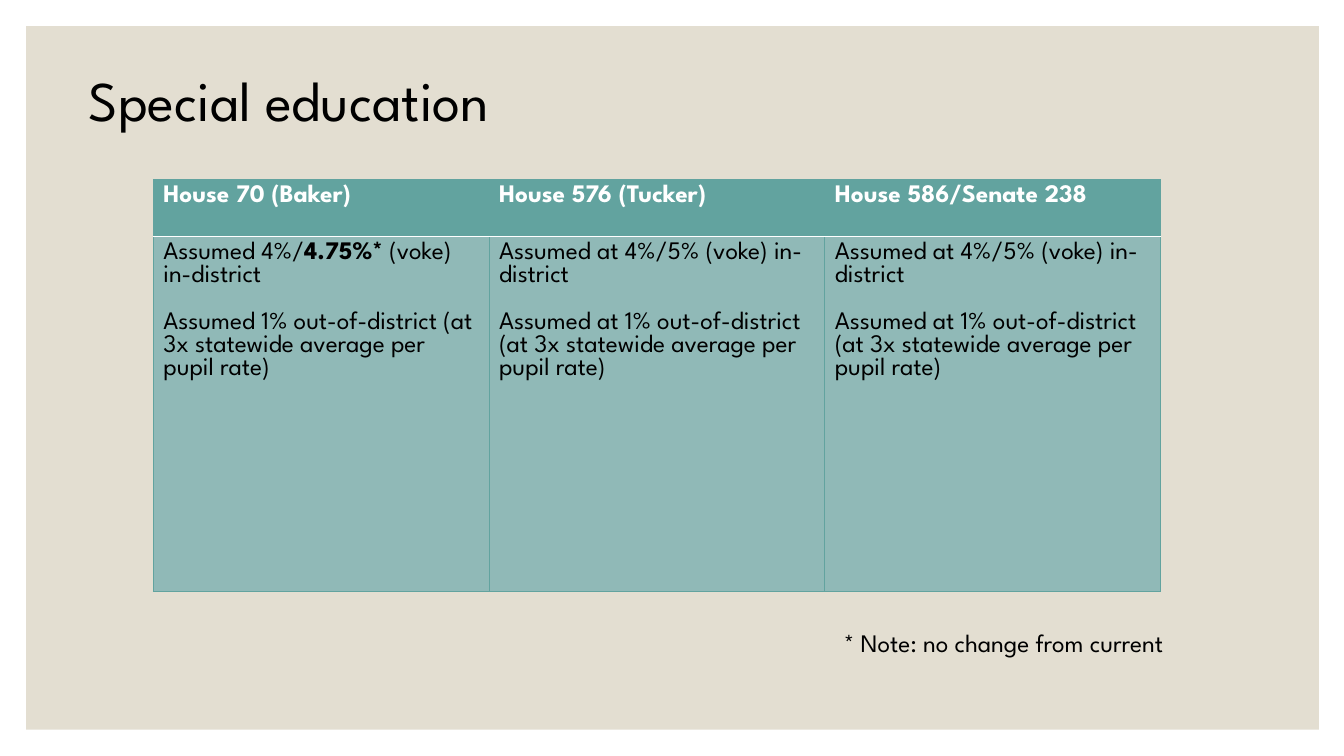
import pptx
import pptx.dml.color
import pptx.enum.shapes
import pptx.enum.text
import pptx.oxml
import pptx.oxml.ns
import pptx.util

Inches = pptx.util.Inches
Pt = pptx.util.Pt
RGBColor = pptx.dml.color.RGBColor

SAND = RGBColor(0xE3, 0xDE, 0xD1)
TEAL = RGBColor(0x62, 0xA3, 0x9F)
PALE_TEAL = RGBColor(0x90, 0xB9, 0xB7)
WHITE = RGBColor(0xFF, 0xFF, 0xFF)
BLACK = RGBColor(0x00, 0x00, 0x00)

HEADINGS = ["House 70 (Baker)", "House 576 (Tucker)", "House 586/Senate 238"]
SHARED_RATES = [
    [("Assumed at 4%/5% (voke) in-district", False)],
    [("Assumed at 1% out-of-district (at 3x statewide average per pupil rate)", False)],
]
BAKER_RATES = [
    [("Assumed 4%/", False), ("4.75%*", True), (" (voke) in-district", False)],
    [("Assumed 1% out-of-district (at 3x statewide average per pupil rate)", False)],
]
RATES = [BAKER_RATES, SHARED_RATES, SHARED_RATES]


class BillSlide:
    font = "League Spartan"
    body_size = 18
    title_size = 40

    def __init__(self, deck):
        self.slide = deck.slides.add_slide(deck.slide_layouts[5])

    def add_runs(self, frame, paragraphs, size, color):
        for index, runs in enumerate(paragraphs):
            paragraph = frame.add_paragraph() if index else frame.paragraphs[0]
            paragraph.alignment = pptx.enum.text.PP_ALIGN.LEFT
            paragraph.space_before = Pt(16.5 if index else 0)
            for text, bold in runs:
                run = paragraph.add_run()
                run.text = text
                run.font.name = self.font
                run.font.size = Pt(size)
                run.font.bold = bold
                run.font.color.rgb = color

    def panel(self, left, top, width, height):
        panel = self.slide.shapes.add_shape(
            pptx.enum.shapes.MSO_SHAPE.RECTANGLE,
            Inches(left), Inches(top), Inches(width), Inches(height))
        panel.shadow.inherit = False
        panel.fill.solid()
        panel.fill.fore_color.rgb = SAND
        panel.line.fill.background()
        self.slide.shapes.title._element.addprevious(panel._element)

    def place_line(self, holder, text, size, left, top, width, height):
        holder.left, holder.top = Inches(left), Inches(top)
        holder.width, holder.height = Inches(width), Inches(height)
        frame = holder.text_frame
        frame.word_wrap = True
        frame.auto_size = pptx.enum.text.MSO_AUTO_SIZE.NONE
        frame.vertical_anchor = pptx.enum.text.MSO_ANCHOR.BOTTOM
        self.add_runs(frame, [[(text, False)]], size, BLACK)

    def title(self, text, *box):
        self.place_line(self.slide.shapes.title, text, self.title_size, *box)

    def note(self, text, *box):
        holder = self.slide.shapes.add_textbox(0, 0, 0, 0)
        self.place_line(holder, text, self.body_size, *box)

    def border(self, cell, side, position, color, points):
        line = pptx.oxml.parse_xml(
            f'<a:{side} {pptx.oxml.ns.nsdecls("a")} w="{Pt(points)}">'
            f'<a:solidFill><a:srgbClr val="{color}"/></a:solidFill></a:{side}>')
        cell._tc.get_or_add_tcPr().insert(position, line)

    def cell(self, cell, paragraphs, fill, color, divider):
        cell.fill.solid()
        cell.fill.fore_color.rgb = fill
        cell.vertical_anchor = pptx.enum.text.MSO_ANCHOR.TOP
        self.add_runs(cell.text_frame, paragraphs, self.body_size, color)
        for position, side in enumerate(("lnL", "lnR", "lnT", "lnB")):
            style = (WHITE, 1) if side == divider else (TEAL, 0.5)
            self.border(cell, side, position, *style)

    def comparison(self, left, top, width, row_heights):
        table = self.slide.shapes.add_table(
            2, len(HEADINGS), Inches(left), Inches(top),
            Inches(width), Inches(sum(row_heights))).table
        table.horz_banding = False
        for row, height in zip(table.rows, row_heights):
            row.height = Inches(height)
        for column, (heading, rates) in enumerate(zip(HEADINGS, RATES)):
            table.columns[column].width = Inches(width / len(HEADINGS))
            self.cell(table.cell(0, column), [[(heading, True)]], TEAL, WHITE, "lnB")
            self.cell(table.cell(1, column), rates, PALE_TEAL, BLACK, "lnT")


def main():
    deck = pptx.Presentation()
    deck.slide_width, deck.slide_height = Inches(13.33), Inches(7.5)
    bills = BillSlide(deck)
    bills.panel(0.26, 0.26, 12.82, 6.98)
    bills.title("Special education", 0.78, 0.6, 6.55, 0.77)
    bills.comparison(1.52, 1.78, 9.99, (0.57, 3.52))
    bills.note("* Note: no change from current", 8.27, 6.17, 4.09, 0.4)
    deck.save("out.pptx")


if __name__ == "__main__":
    main()
